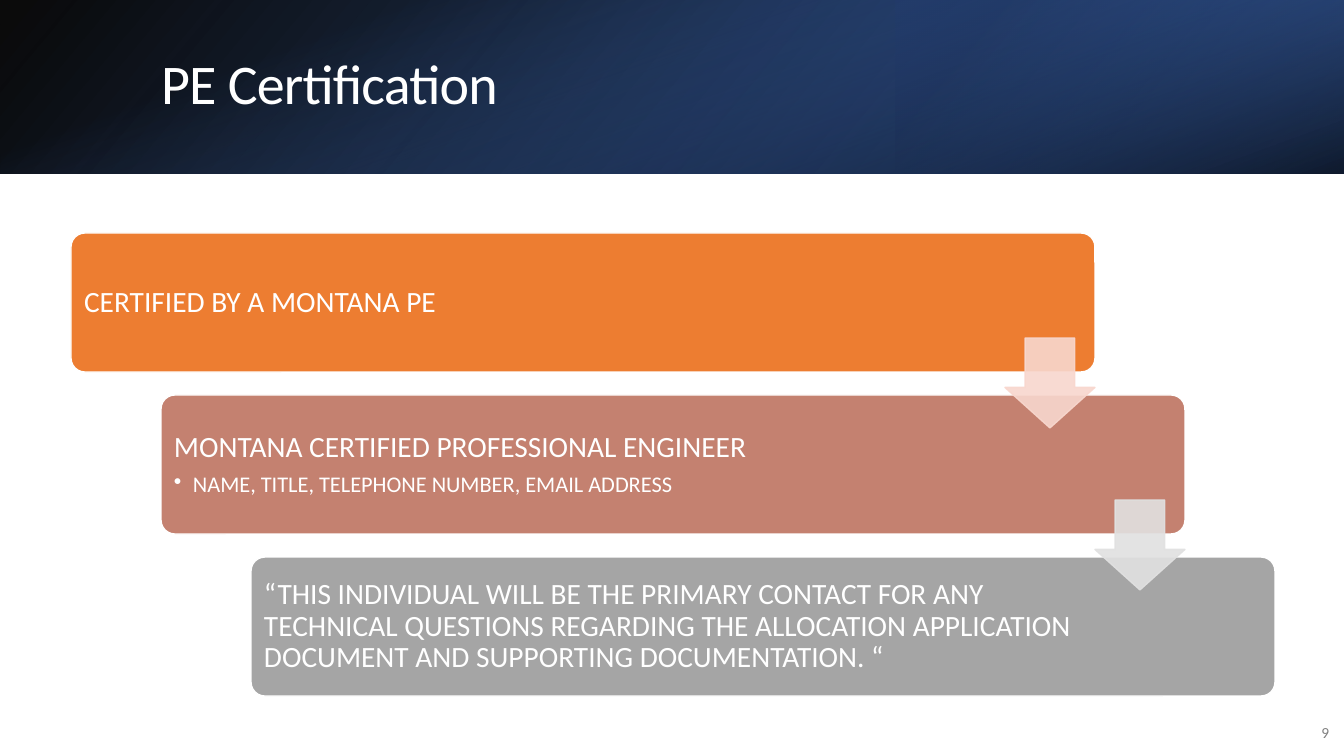
from lxml import etree
from pptx import Presentation
from pptx.dml.color import RGBColor
from pptx.enum.shapes import MSO_SHAPE
from pptx.enum.text import MSO_ANCHOR, MSO_AUTO_SIZE, PP_ALIGN
from pptx.oxml.ns import qn
from pptx.util import Emu, Pt

RECTANGLE = MSO_SHAPE.RECTANGLE
ROUNDED = MSO_SHAPE.ROUNDED_RECTANGLE
DOWN_ARROW = MSO_SHAPE.DOWN_ARROW
MIDDLE = MSO_ANCHOR.MIDDLE
NO_AUTOFIT = MSO_AUTO_SIZE.NONE
LEFT, RIGHT = PP_ALIGN.LEFT, PP_ALIGN.RIGHT

WHITE = RGBColor(0xFF, 0xFF, 0xFF)
BLACK = RGBColor(0x00, 0x00, 0x00)
NAVY = RGBColor(0x20, 0x38, 0x64)
DEEP_BLUE = RGBColor(0x2F, 0x55, 0x97)
BLUE = RGBColor(0x44, 0x72, 0xC4)
NUMBER_GRAY = RGBColor(0x80, 0x80, 0x80)
ORANGE = RGBColor(0xED, 0x7D, 0x31)
CLAY = RGBColor(0xC4, 0x81, 0x70)
GRAY = RGBColor(0xA5, 0xA5, 0xA5)
PALE_PINK = RGBColor(0xF8, 0xD7, 0xCE)
PALE_GRAY = RGBColor(0xE1, 0xE1, 0xE1)

FONT = "Calibri"
PAGE_WIDTH, PAGE_HEIGHT = 1344, 756
BAND_HEIGHT = 174
STEP_X, STEP_Y = 90, 162
CARD_WIDTH, CARD_HEIGHT = 1024, 139
ARROW_SIZE = 90

STEPS = [
    (ORANGE, 874, "CERTIFIED BY A MONTANA PE", None),
    (CLAY, 836, "MONTANA CERTIFIED PROFESSIONAL ENGINEER",
     "NAME, TITLE, TELEPHONE NUMBER, EMAIL ADDRESS"),
    (GRAY, 836, "“THIS INDIVIDUAL WILL BE THE PRIMARY CONTACT FOR ANY TECHNICAL "
     "QUESTIONS REGARDING THE ALLOCATION APPLICATION DOCUMENT AND SUPPORTING "
     "DOCUMENTATION. “", None),
]
ARROW_COLORS = [PALE_PINK, PALE_GRAY]


def px(length):
    return Emu(round(length * 914400 / 100.8))


def add_shape(shapes, preset, box):
    shape = shapes.add_shape(preset, *map(px, box))
    shape.shadow.inherit = False
    return shape


def set_opacity(shape, percents):
    colors = shape.element.spPr.iter(qn("a:srgbClr"))
    for color, percent in zip(list(colors), percents):
        etree.SubElement(color, qn("a:alpha")).set("val", str(percent * 1000))


def set_font(para, size, color):
    para.font.name = FONT
    para.font.size = Pt(size)
    para.font.color.rgb = color


def add_gradient(page, box, stops, angle, rotation=0, flipped=False):
    layer = add_shape(page.shapes, RECTANGLE, box)
    layer.line.fill.background()
    layer.rotation = rotation
    if flipped:
        layer.element.spPr.find(qn("a:xfrm")).set("flipH", "1")
    layer.fill.gradient()
    layer.fill.gradient_angle = 360 - angle
    for stop, (position, color, _) in zip(layer.fill.gradient_stops, stops):
        stop.position = position
        stop.color.rgb = color
    set_opacity(layer, [opacity for _, _, opacity in stops])


def add_header(page, box):
    left, top, width, height = box
    add_gradient(page, box, [(0, BLACK, 96), (1, DEEP_BLUE, 100)], 140, flipped=True)
    add_gradient(page, (left + 896, top, width - 896, height),
                 [(0.19, NAVY, 68), (1, BLUE, 79)], 320, 180, True)
    add_gradient(page, (left + (width - height) / 2, top + (height - width) / 2, height, width),
                 [(0.23, BLUE, 0), (0.99, BLACK, 74)], 340, 90)

    title = page.shapes.title
    title.left, title.top = px(left + 151), px(top + 38)
    title.width, title.height = px(1107), px(97)
    frame = title.text_frame
    frame.text = "PE Certification"
    frame.auto_size = NO_AUTOFIT
    frame.vertical_anchor = MIDDLE
    para = frame.paragraphs[0]
    para.alignment = LEFT
    para.line_spacing = 0.9
    set_font(para, 40, WHITE)
    para.runs[0].font.size = Pt(40)
    para.runs[0].font._element.set("spc", "-50")
    page.shapes._spTree.append(title.element)


def add_page_number(page, box):
    frame = page.shapes.add_textbox(*map(px, box)).text_frame
    frame.word_wrap = True
    frame.vertical_anchor = MIDDLE
    para = frame.paragraphs[0]
    para.text = "9"
    para.alignment = RIGHT
    set_font(para, 11, NUMBER_GRAY)


def add_bullet(para):
    properties = para._p.get_or_add_pPr()
    properties.set("marL", str(px(19)))
    properties.set("indent", str(-px(19)))
    etree.SubElement(properties, qn("a:buChar")).set("char", "•")


def add_card(shapes, box, color, text_width, heading, detail):
    left, top, _, height = box
    card = add_shape(shapes, ROUNDED, box)
    card.adjustments[0] = 0.1
    card.fill.solid()
    card.fill.fore_color.rgb = color
    card.line.color.rgb = WHITE
    card.line.width = Pt(1)

    text_box = (left + 4, top + 4, text_width, height - 8)
    frame = shapes.add_textbox(*map(px, text_box)).text_frame
    frame.word_wrap = True
    frame.vertical_anchor = MIDDLE
    frame.margin_left = frame.margin_right = px(9)
    frame.margin_top = frame.margin_bottom = px(9)
    para = frame.paragraphs[0]
    para.text = heading
    para.line_spacing = 0.9
    set_font(para, 21, WHITE)
    if detail:
        para.space_after = Pt(7)
        item = frame.add_paragraph()
        item.text = detail
        item.level = 1
        add_bullet(item)
        item.line_spacing = 0.9
        set_font(item, 16, WHITE)


def add_arrow(shapes, box, color):
    arrow = add_shape(shapes, DOWN_ARROW, box)
    arrow.adjustments[0] = 0.55
    arrow.adjustments[1] = 0.45
    arrow.fill.solid()
    arrow.fill.fore_color.rgb = color
    arrow.line.color.rgb = color
    arrow.line.width = Pt(1)
    set_opacity(arrow, [90, 90])


def add_staircase(page, left, top):
    shapes = page.shapes.add_group_shape().shapes
    for index, step in enumerate(STEPS):
        box = (left + index * STEP_X, top + index * STEP_Y, CARD_WIDTH, CARD_HEIGHT)
        add_card(shapes, box, *step)
    for index, color in enumerate(ARROW_COLORS):
        box = (left + CARD_WIDTH - ARROW_SIZE + index * STEP_X,
               top + 105 + index * STEP_Y, ARROW_SIZE, ARROW_SIZE)
        add_arrow(shapes, box, color)


def main():
    deck = Presentation()
    deck.slide_width, deck.slide_height = px(PAGE_WIDTH), px(PAGE_HEIGHT)
    page = deck.slides.add_slide(deck.slide_layouts[5])
    add_header(page, (0, 0, PAGE_WIDTH, BAND_HEIGHT))
    add_page_number(page, (1290, 712, 49, 40))
    add_staircase(page, 71, 233)
    deck.save("out.pptx")


if __name__ == "__main__":
    main()
